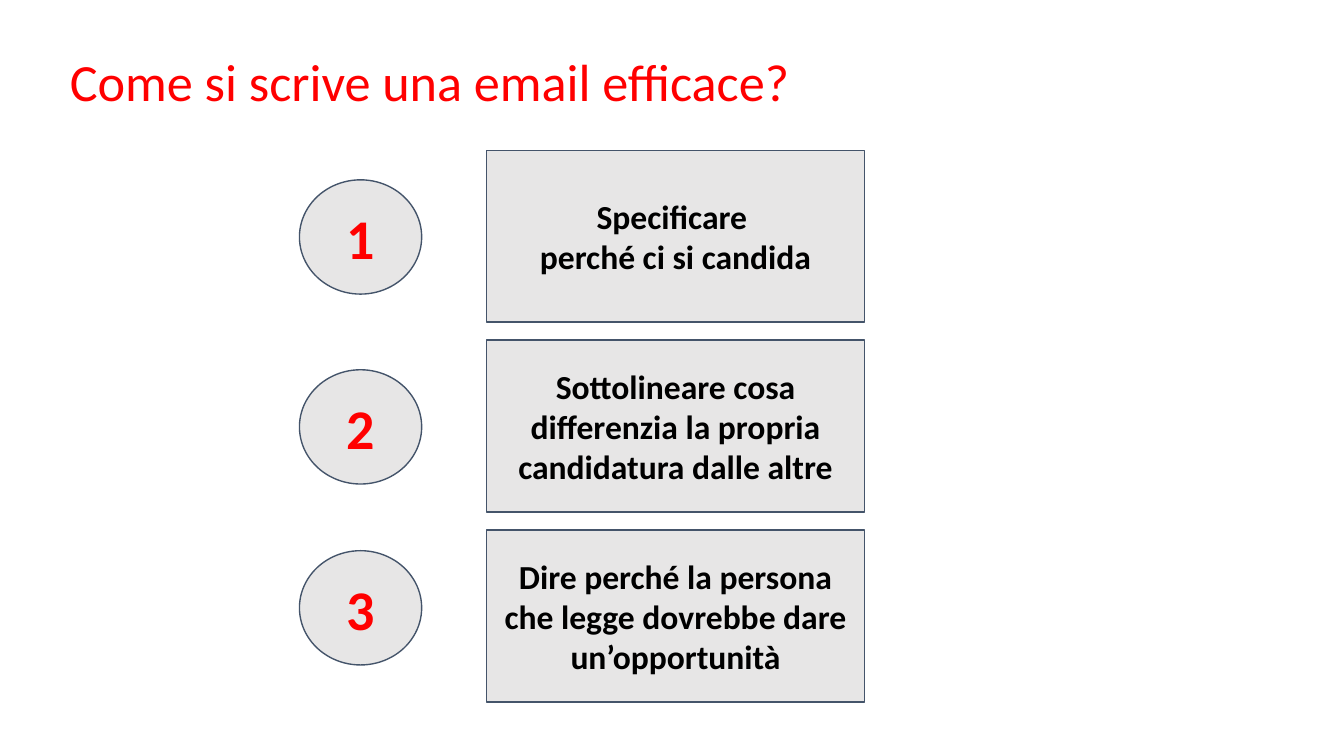
"""Build the slide with three numbered tips for an effective email."""

from dataclasses import dataclass

from pptx import Presentation
from pptx.dml.color import RGBColor
from pptx.enum.shapes import MSO_SHAPE
from pptx.enum.text import MSO_ANCHOR, PP_ALIGN
from pptx.slide import Slide
from pptx.text.text import TextFrame
from pptx.util import Cm, Pt

RECTANGLE = MSO_SHAPE.RECTANGLE
OVAL = MSO_SHAPE.OVAL
MIDDLE = MSO_ANCHOR.MIDDLE
LEFT = PP_ALIGN.LEFT
CENTER = PP_ALIGN.CENTER


@dataclass(frozen=True)
class Theme:
    """Colours, type sizes and spacing of the slide."""

    font: str = "Calibri"
    accent: RGBColor = RGBColor(0xFF, 0x00, 0x00)
    text: RGBColor = RGBColor(0x00, 0x00, 0x00)
    fill: RGBColor = RGBColor(0xE7, 0xE6, 0xE6)
    outline: RGBColor = RGBColor(0x44, 0x54, 0x6A)
    title_size: Pt = Pt(28)
    number_size: Pt = Pt(30)
    tip_size: Pt = Pt(18)
    outline_width: Pt = Pt(0.75)
    margin: Cm = Cm(0.25)


@dataclass(frozen=True)
class Box:
    """Position and size in centimetres."""

    left: float
    top: float
    width: float
    height: float


@dataclass(frozen=True)
class Tip:
    """A piece of advice and the top of its number badge."""

    text: str
    badge_top: float


THEME = Theme()
TITLE_BOX = Box(1.07, 0.74, 21.89, 1.55)
FIRST_TIP_TOP = 2.84
TIP_PITCH = 3.59
TIPS = (
    Tip("Specificare \vperché ci si candida", 3.4),
    Tip("Sottolineare cosa differenzia la propria candidatura dalle altre", 6.99),
    Tip("Dire perché la persona che legge dovrebbe dare un’opportunità", 10.41),
)


def write_text(frame: TextFrame, text: str, size: Pt, color: RGBColor,
               alignment: PP_ALIGN, bold: bool) -> None:
    """Fill a text frame with one formatted paragraph."""
    frame.text = text
    frame.word_wrap = True
    frame.vertical_anchor = MIDDLE
    frame.margin_left = frame.margin_right = THEME.margin
    frame.margin_top = frame.margin_bottom = THEME.margin
    paragraph = frame.paragraphs[0]
    paragraph.alignment = alignment
    paragraph.font.name = THEME.font
    paragraph.font.size = size
    paragraph.font.bold = bold
    paragraph.font.color.rgb = color


def add_title(slide: Slide, text: str, box: Box) -> None:
    """Place and format the title placeholder."""
    title = slide.shapes.title
    title.left, title.top = Cm(box.left), Cm(box.top)
    title.width, title.height = Cm(box.width), Cm(box.height)
    write_text(title.text_frame, text, THEME.title_size, THEME.accent, LEFT, False)


def add_panel(slide: Slide, kind: MSO_SHAPE, box: Box, text: str,
              size: Pt, color: RGBColor) -> None:
    """Add an outlined grey shape with bold centred text."""
    shape = slide.shapes.add_shape(
        kind, Cm(box.left), Cm(box.top), Cm(box.width), Cm(box.height))
    shape.shadow.inherit = False
    shape.fill.solid()
    shape.fill.fore_color.rgb = THEME.fill
    shape.line.color.rgb = THEME.outline
    shape.line.width = THEME.outline_width
    write_text(shape.text_frame, text, size, color, CENTER, True)


def main() -> None:
    """Create and save the presentation."""
    presentation = Presentation()
    presentation.slide_width, presentation.slide_height = Cm(25.4), Cm(14.29)
    slide = presentation.slides.add_slide(
        presentation.slide_layouts.get_by_name("Title Only"))
    add_title(slide, "Come si scrive una email efficace?", TITLE_BOX)
    for index, tip in enumerate(TIPS):
        tip_box = Box(9.2, FIRST_TIP_TOP + index * TIP_PITCH, 7.14, 3.25)
        badge_box = Box(5.66, tip.badge_top, 2.31, 2.16)
        add_panel(slide, RECTANGLE, tip_box, tip.text, THEME.tip_size, THEME.text)
        add_panel(slide, OVAL, badge_box, str(index + 1),
                  THEME.number_size, THEME.accent)
    presentation.save("out.pptx")


if __name__ == "__main__":
    main()
